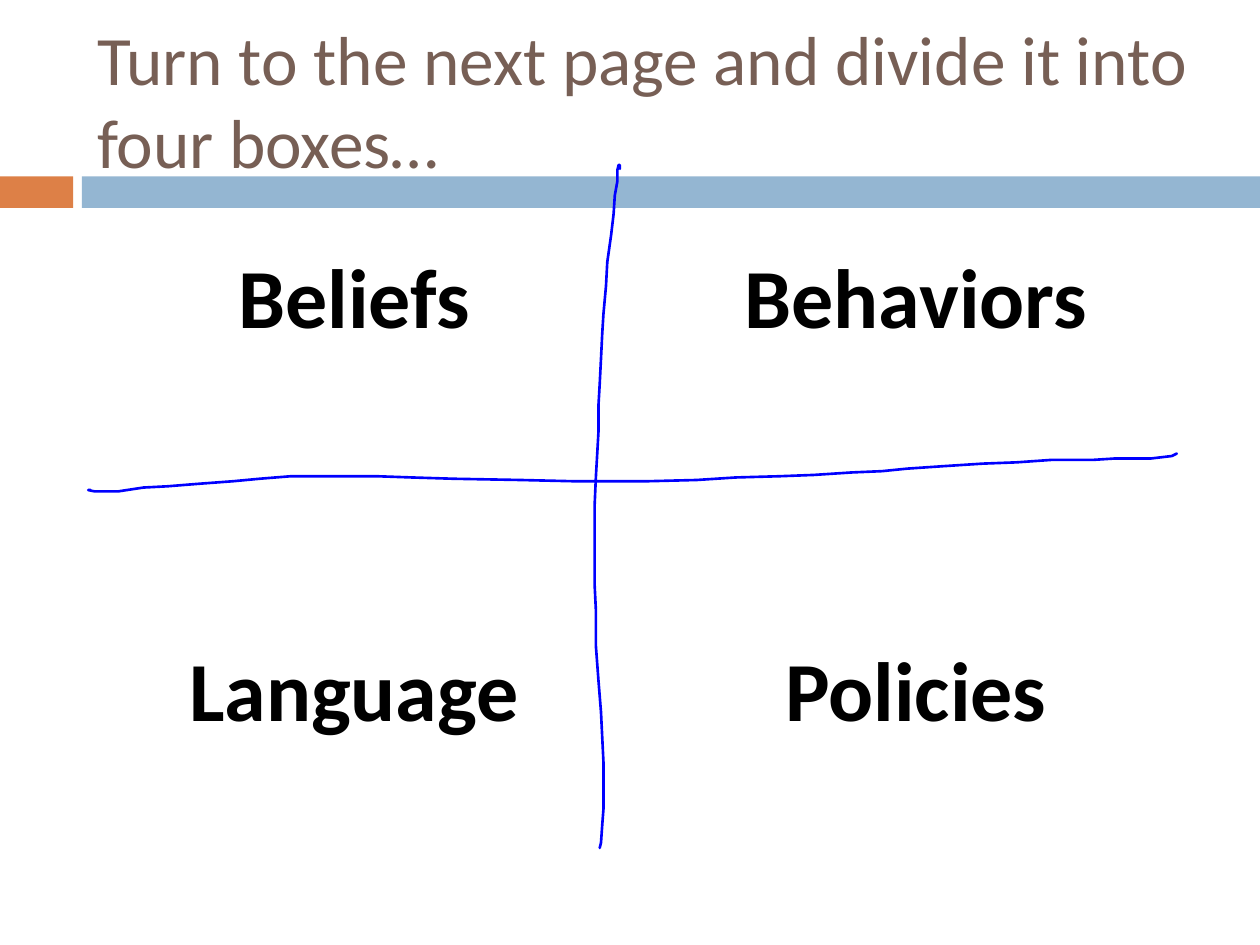
from dataclasses import dataclass

from pptx import Presentation
from pptx.dml.color import RGBColor
from pptx.enum.shapes import MSO_SHAPE
from pptx.enum.text import MSO_ANCHOR, MSO_AUTO_SIZE, PP_ALIGN
from pptx.util import Inches, Pt

RECTANGLE = MSO_SHAPE.RECTANGLE
MIDDLE = MSO_ANCHOR.MIDDLE
TOP = MSO_ANCHOR.TOP
FIXED_SIZE = MSO_AUTO_SIZE.NONE
LEFT = PP_ALIGN.LEFT
CENTER = PP_ALIGN.CENTER
TITLE_ONLY_LAYOUT = 5
NO_GRID_STYLE = "{2D5ABB26-0587-4C30-8999-92F81FD0307C}"


@dataclass(frozen=True)
class Theme:
    """Colours, font and sizes of the slide."""

    font: str = "Calibri"
    title: RGBColor = RGBColor(0x77, 0x5F, 0x55)
    label: RGBColor = RGBColor(0, 0, 0)
    accent: RGBColor = RGBColor(0xDD, 0x80, 0x47)
    band: RGBColor = RGBColor(0x94, 0xB6, 0xD2)
    ink: RGBColor = RGBColor(0, 0, 0xFF)
    title_size: Pt = Pt(39.6)
    label_size: Pt = Pt(48)
    ink_width: Pt = Pt(1.5)


THEME = Theme()
TITLE = "Turn to the next page and divide it into four boxes…"
BOX_LABELS = [["Beliefs", "Behaviors"], ["Language", "Policies"]]
ROW_HEIGHTS = [3.12, 2.12]
COLUMN_WIDTH = 4.46
VERTICAL_STROKE = [
    (4.92, 1.34), (4.92, 1.31), (4.91, 1.31), (4.9, 1.35), (4.9, 1.44),
    (4.88, 1.55), (4.87, 1.7), (4.85, 1.87), (4.82, 2.08), (4.81, 2.27),
    (4.79, 2.49), (4.78, 2.65), (4.77, 2.85), (4.76, 3.05), (4.75, 3.22),
    (4.75, 3.43), (4.74, 3.61), (4.73, 3.78), (4.72, 4.0), (4.72, 4.65),
    (4.73, 4.85), (4.73, 5.13), (4.75, 5.4), (4.77, 5.65), (4.78, 5.85),
    (4.79, 6.05), (4.79, 6.42), (4.78, 6.55), (4.77, 6.69), (4.76, 6.73),
]
HORIZONTAL_STROKE = [
    (0.72, 3.89), (0.7, 3.89), (0.75, 3.9), (0.94, 3.9), (1.14, 3.87),
    (1.33, 3.86), (1.58, 3.84), (1.85, 3.82), (2.06, 3.8), (2.31, 3.78),
    (2.99, 3.78), (3.27, 3.79), (3.6, 3.8), (4.13, 3.81), (4.55, 3.82),
    (5.14, 3.82), (5.53, 3.81), (5.84, 3.79), (6.19, 3.78), (6.46, 3.77),
    (6.76, 3.75), (7.0, 3.74), (7.2, 3.72), (7.49, 3.7), (7.8, 3.68),
    (8.07, 3.67), (8.35, 3.65), (8.68, 3.65), (8.84, 3.64), (9.13, 3.64),
    (9.3, 3.62), (9.34, 3.6),
]


def style_text(paragraph, size, color, align, bold=False):
    """Format a paragraph and all its runs."""
    paragraph.alignment = align
    for run in paragraph.runs:
        run.font.name = THEME.font
        run.font.size = size
        run.font.bold = bold
        run.font.color.rgb = color


def set_title(slide, text):
    """Fill and place the title placeholder."""
    title = slide.shapes.title
    title.left, title.top = Inches(0.67), Inches(0.25)
    title.width, title.height = Inches(8.92), Inches(1.08)
    frame = title.text_frame
    frame.text = text
    frame.auto_size = FIXED_SIZE
    frame.vertical_anchor = MIDDLE
    style_text(frame.paragraphs[0], THEME.title_size, THEME.title, LEFT)


def add_band(slide, left, width, color):
    """Draw one part of the band under the title."""
    band = slide.shapes.add_shape(
        RECTANGLE, Inches(left), Inches(1.4), Inches(width), Inches(0.25)
    )
    band.shadow.inherit = False
    band.fill.solid()
    band.fill.fore_color.rgb = color
    band.line.fill.background()


def add_boxes(slide, labels):
    """Add the borderless table that holds the four box labels."""
    table = slide.shapes.add_table(
        len(labels), len(labels[0]), Inches(0.58), Inches(1.92),
        Inches(COLUMN_WIDTH * len(labels[0])), Inches(sum(ROW_HEIGHTS)),
    ).table
    table._tbl.tblPr.find("{*}tableStyleId").text = NO_GRID_STYLE
    table.first_row = table.horz_banding = False
    for column in table.columns:
        column.width = Inches(COLUMN_WIDTH)
    for row, height, texts in zip(table.rows, ROW_HEIGHTS, labels):
        row.height = Inches(height)
        for cell, text in zip(row.cells, texts):
            cell.text = text
            cell.fill.background()
            cell.vertical_anchor = TOP
            style_text(cell.text_frame.paragraphs[0], THEME.label_size,
                       THEME.label, CENTER, bold=True)


def add_stroke(slide, points):
    """Draw a hand-drawn ink line through points given in inches."""
    start, *rest = [(Inches(x), Inches(y)) for x, y in points]
    builder = slide.shapes.build_freeform(*start)
    builder.add_line_segments(rest, close=False)
    stroke = builder.convert_to_shape()
    stroke.shadow.inherit = False
    stroke.fill.background()
    stroke.line.color.rgb = THEME.ink
    stroke.line.width = THEME.ink_width
    stroke.line._get_or_add_ln().set("cap", "rnd")


def main():
    """Build and save the slide."""
    presentation = Presentation()
    presentation.slide_width, presentation.slide_height = Inches(10), Inches(7.5)
    slide = presentation.slides.add_slide(
        presentation.slide_layouts[TITLE_ONLY_LAYOUT]
    )
    add_band(slide, 0, 0.58, THEME.accent)
    add_band(slide, 0.65, 9.35, THEME.band)
    set_title(slide, TITLE)
    add_boxes(slide, BOX_LABELS)
    for points in (VERTICAL_STROKE, HORIZONTAL_STROKE):
        add_stroke(slide, points)
    presentation.save("out.pptx")


if __name__ == "__main__":
    main()
